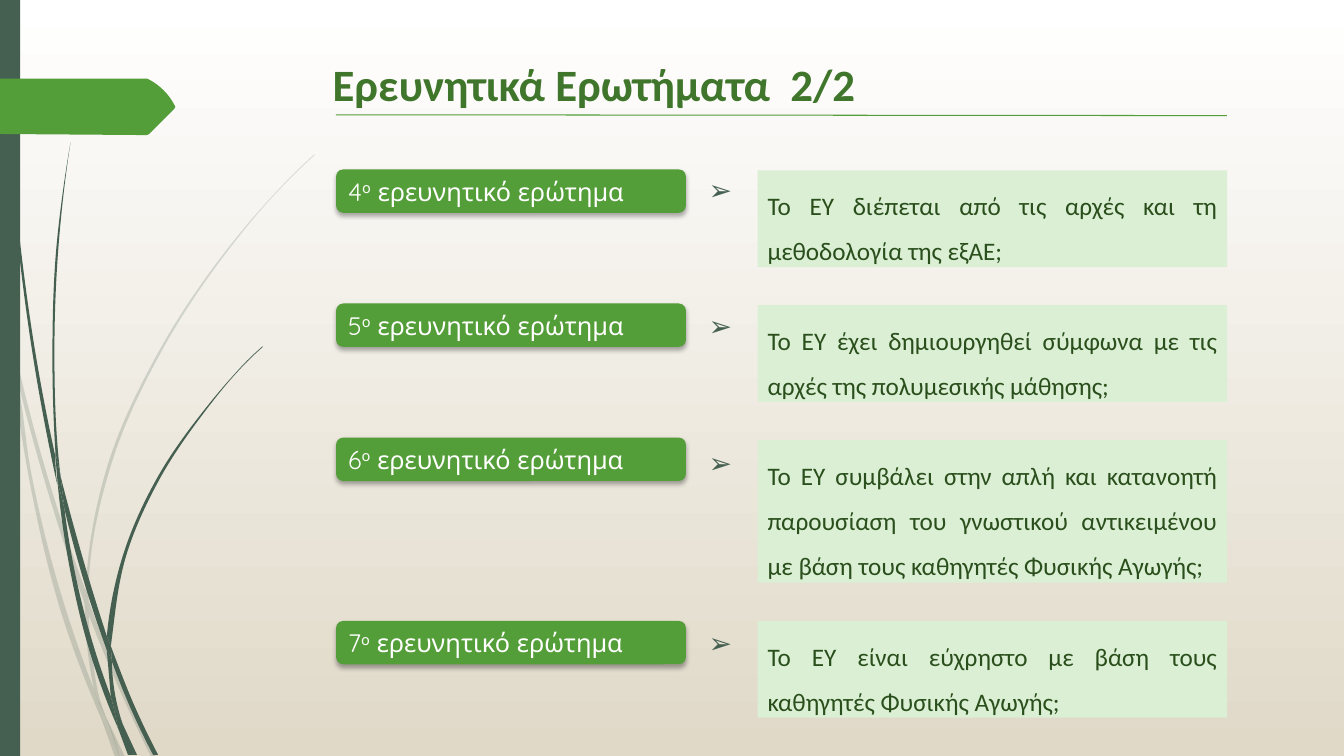
from lxml import etree
from dataclasses import dataclass
from pptx import Presentation
from pptx.dml.color import RGBColor
from pptx.enum.shapes import MSO_CONNECTOR, MSO_SHAPE
from pptx.enum.text import MSO_ANCHOR, MSO_AUTO_SIZE, PP_ALIGN
from pptx.oxml.ns import qn
from pptx.util import Pt


@dataclass(frozen=True)
class Theme:
    """Colours, fonts and type sizes of the slide."""
    slate: str = "455F51"
    green: str = "549E39"
    title: str = "3F762B"
    body: str = "2A4F1C"
    panel: str = "DBEFD4"
    white: str = "FFFFFF"
    sand: str = "E0D9C8"
    shadow: str = "000000"
    text_font: str = "Calibri"
    label_font: str = "Quicksand"
    title_size: int = 32
    body_size: int = 18
    arrow_size: int = 20


GRID = 0.72
PALE_GRASS = [
    [[(11, 350), (9, 322), (0, 282)], [(0, 299)], [(10, 344)]],
    [[(14, 345), (17, 376)], [(58, 522), (84, 599)], [(85, 586)], [(62, 520)]],
    [[(88, 596), (88, 610)], [(123, 694), (150, 751)], [(155, 751)], [(127, 692), (92, 607)]],
    [[(119, 751), (124, 751)], [(105, 711)], []],
    [[(11, 350), (28, 470), (65, 621), (92, 693), (101, 714)], [(99, 707), (93, 683)],
     [(70, 619), (31, 469), (17, 376)]],
    [[(84, 599), (87, 646), (93, 683)], [(96, 692), (105, 711)],
     [(103, 706), (91, 646), (88, 610)], [(88, 608)], []],
    [[(312, 154), (312, 153)], [(289, 175), (268, 197), (228, 244), (158, 348), (107, 461),
     (85, 584)], [(85, 586)], [(88, 596)],
     [(88, 584), (110, 462), (160, 349), (229, 245), (268, 198), (290, 175)]],
    [[(101, 714), (114, 751)], [(119, 751)], []],
    [[(88, 608), (88, 610)], [(88, 596)], [(85, 586)], [(84, 599)], []],
    [[(96, 692), (93, 683)], [(99, 707), (101, 714)], [(119, 751)], [(105, 711)]],
]
DARK_GRASS = [
    [[(3, 0), (4, 48), (7, 110), (17, 233), (33, 355), (56, 477)], [(57, 481)],
     [(55, 457), (55, 453)], [(36, 355), (19, 232), (8, 109), (5, 48), (4, 0)], []],
    [[(60, 472), (64, 505)], [(88, 592), (106, 645)], [(106, 631)], [(93, 590)]],
    [[(110, 641), (111, 656)], [(132, 708), (152, 749)], [(157, 749)], [(136, 706), (113, 649)]],
    [[(57, 477), (68, 557), (93, 659), (111, 708), (117, 722)], [(116, 717), (110, 691)],
     [(98, 657), (72, 556), (64, 505)], []],
    [[(60, 472), (58, 453), (54, 349), (58, 245), (63, 193), (70, 141)],
     [(62, 193), (56, 245), (52, 349), (55, 449)], []],
    [[(122, 719), (133, 749)], [(136, 749)], []],
    [[(57, 477), (64, 505)], [(60, 472)], [(55, 449)], [(55, 453)], []],
    [[(261, 344), (260, 344)], [(245, 358), (231, 373), (204, 405), (156, 474), (122, 551),
     (106, 631)], [(110, 641)],
     [(111, 633), (125, 552), (158, 476), (205, 406), (231, 374), (245, 359)]],
    [[(117, 722), (127, 749)], [(131, 749)], []],
    [[(106, 645), (110, 691)], [(116, 706), (122, 719)], [(121, 716), (111, 656)], [(109, 651)]],
    [[(106, 645), (109, 651), (111, 656)], [(110, 641)], [(106, 631)], []],
    [[(116, 706), (110, 691)], [(116, 717), (117, 722)], [(130, 749)], [(133, 749)], [(122, 719)]],
]
TAG = [[(173, 108), (148, 133)], [(146, 134)], [(136, 134)], [(0, 133)], [(0, 78)], [(136, 78)],
       [(146, 78)], [(148, 79)], [(173, 104), (174, 106)]]
QUESTIONS = [
    ("4", "Το ΕΥ διέπεται από τις αρχές και τη μεθοδολογία της εξΑΕ;", 69.1, 0.7, 2.2),
    ("5", "Το ΕΥ έχει δημιουργηθεί σύμφωνα με τις αρχές της πολυμεσικής μάθησης;", 69.1, 1.2, 1.3),
    ("6", "Το ΕΥ συμβάλει στην απλή και κατανοητή παρουσίαση του γνωστικού αντικειμένου "
     "με βάση τους καθηγητές Φυσικής Αγωγής;", 102, 1.7, 0),
    ("7", "Το ΕΥ είναι εύχρηστο με βάση τους καθηγητές Φυσικής Αγωγής;", 69.1, 0, 0),
]
FIRST_TOP, ROW_GAP = 121.7, 27.2


def bend(edge):
    """Return smooth cubic segments through the points of one edge."""
    steps = [b - a for a, b in zip(edge, edge[1:])]
    units = [d / abs(d) for d in steps]
    if len(steps) == 1:
        return [(None, None, edge[1])]
    mid = [u * abs(e) + v * abs(d) for u, v, d, e in zip(units, units[1:], steps, steps[1:])]
    mid = [m / abs(m) for m in mid]
    ends = [u * u * m.conjugate() for u, m in ((units[0], mid[0]), (units[-1], mid[-1]))]
    tans = [ends[0], *mid, ends[1]]
    return [(a + t * abs(d) / 3, b - v * abs(d) / 3, b)
            for a, b, t, v, d in zip(edge, edge[1:], tans, tans[1:], steps)]


class SlideBuilder:
    """Adds styled elements to one slide."""

    def __init__(self, s, theme):
        """Keep the slide and its theme."""
        self.s, self.theme = s, theme

    def background(self):
        """Fill the background from white down to sand."""
        fill = self.s.background.fill
        fill.gradient()
        fill.gradient_angle = 270
        for stop, pos, color in zip(fill.gradient_stops, (0, 1), (self.theme.white, self.theme.sand)):
            stop.position, stop.color.rgb = pos, RGBColor.from_string(color)

    def paint(self, sp, color, alpha=None):
        """Give a shape a plain fill without line or shadow."""
        sp.shadow.inherit = False
        sp.line.fill.background()
        sp.fill.solid()
        sp.fill.fore_color.rgb = RGBColor.from_string(color)
        if alpha:
            clr = sp._element.spPr.find(qn("a:solidFill"))[0]
            etree.SubElement(clr, qn("a:alpha"), val=str(alpha * 1000))

    def outline(self, edges, color, alpha=None):
        """Draw a closed outline of edges that each run on from the last."""
        edges = [[complex(Pt(x * GRID), Pt(y * GRID)) for x, y in e] for e in edges]
        start = here = edges[0][0]
        edges[0], edges[-1] = edges[0][1:], edges[-1] + [start]
        segments = []
        for edge in edges:
            segments += bend([here, *edge])
            here = edge[-1]
        builder = self.s.shapes.build_freeform(int(start.real), int(start.imag))
        builder.add_line_segments([(int(p.real), int(p.imag)) for _, _, p in segments])
        sp = builder.convert_to_shape()
        corner = complex(sp.left, sp.top)
        for ln, points in zip(list(sp._element.iter(qn("a:lnTo"))), segments):
            if points[0] is not None:
                ln.tag = qn("a:cubicBezTo")
                ln.remove(ln[0])
                for p in points:
                    p -= corner
                    etree.SubElement(ln, qn("a:pt"), x=str(int(p.real)), y=str(int(p.imag)))
        self.paint(sp, color, alpha)

    def box(self, kind, x, y, w, h, color):
        """Draw a filled preset shape."""
        sp = self.s.shapes.add_shape(kind, Pt(x), Pt(y), Pt(w), Pt(h))
        self.paint(sp, color)
        return sp

    def run(self, p, text, size, font, color):
        """Add one styled run and return it."""
        r = p.add_run()
        r.text, r.font.size, r.font.name = text, Pt(size), font
        r.font.color.rgb = RGBColor.from_string(color)
        return r

    def paragraph(self, sp, anchor, align=PP_ALIGN.JUSTIFY):
        """Prepare the paragraph of a shape."""
        tf = sp.text_frame
        tf.word_wrap, tf.vertical_anchor = True, anchor
        tf.paragraphs[0].alignment = align
        return tf.paragraphs[0]

    def title(self, text):
        """Place and style the title placeholder."""
        sp, th = self.s.shapes.title, self.theme
        sp.left, sp.top, sp.width, sp.height = Pt(230.4), Pt(45.4), Pt(417.6), Pt(37.4)
        sp.text_frame.auto_size = MSO_AUTO_SIZE.NONE
        p = self.paragraph(sp, MSO_ANCHOR.BOTTOM, PP_ALIGN.LEFT)
        self.run(p, text, th.title_size, th.text_font, th.title).font.bold = True

    def rule(self, x1, y1, x2, y2):
        """Draw a thin green line."""
        cn = self.s.shapes.add_connector(MSO_CONNECTOR.STRAIGHT, Pt(x1), Pt(y1), Pt(x2), Pt(y2))
        cn.line.width, cn.line.color.rgb = Pt(0.75), RGBColor.from_string(self.theme.green)
        etree.SubElement(cn._element.spPr, qn("a:effectLst"))

    def label(self, number, y):
        """Draw a numbered question label with a soft shadow."""
        th = self.theme
        sp = self.box(MSO_SHAPE.ROUNDED_RECTANGLE, 240, y, 250, 31, th.green)
        shadow = etree.SubElement(sp._element.spPr.find(qn("a:effectLst")), qn("a:outerShdw"),
                                  blurRad=str(Pt(3.5)), dist=str(Pt(2.2)), dir="5400000")
        clr = etree.SubElement(shadow, qn("a:srgbClr"), val=th.shadow)
        etree.SubElement(clr, qn("a:alpha"), val="32000")
        p = self.paragraph(sp, MSO_ANCHOR.MIDDLE)
        for text in (number, "ο", " ερευνητικό ερώτημα"):
            r = self.run(p, text, th.body_size, th.label_font, th.white)
            r.font._element.set("baseline", "30000" if text == "ο" else "0")

    def arrow(self, y):
        """Add the arrow sign between label and question."""
        sp = self.s.shapes.add_textbox(Pt(499), Pt(y), Pt(32.4), Pt(31.5))
        p = self.paragraph(sp, MSO_ANCHOR.TOP)
        self.run(p, "➢", self.theme.arrow_size, self.theme.label_font, self.theme.slate)

    def question(self, text, y, h):
        """Draw a panel with the question text."""
        th = self.theme
        p = self.paragraph(self.box(MSO_SHAPE.RECTANGLE, 541.2, y, 335.4, h, th.panel), MSO_ANCHOR.TOP)
        p.line_spacing = 1.5
        self.run(p, text, th.body_size, th.text_font, th.body)


def main():
    """Build and save the slide."""
    prs, theme = Presentation(), Theme()
    prs.slide_width, prs.slide_height = Pt(960), Pt(540)
    b = SlideBuilder(prs.slides.add_slide(prs.slide_layouts[5]), theme)
    b.background()
    for grass, alpha in ((PALE_GRASS, 20), (DARK_GRASS, None)):
        for piece in grass:
            b.outline(piece, theme.slate, alpha)
    b.box(MSO_SHAPE.RECTANGLE, 0, 0, 14.4, 540, theme.slate)
    b.outline(TAG, theme.green)
    b.title("Ερευνητικά Ερωτήματα  2/2")
    b.rule(240, 82, 876.4, 82.6)
    y = FIRST_TOP
    for number, text, height, label_lift, arrow_lift in QUESTIONS:
        b.label(number, y - label_lift)
        b.question(text, y, height)
        b.arrow(y - arrow_lift)
        y += height + ROW_GAP
    prs.save("out.pptx")


if __name__ == "__main__":
    main()
